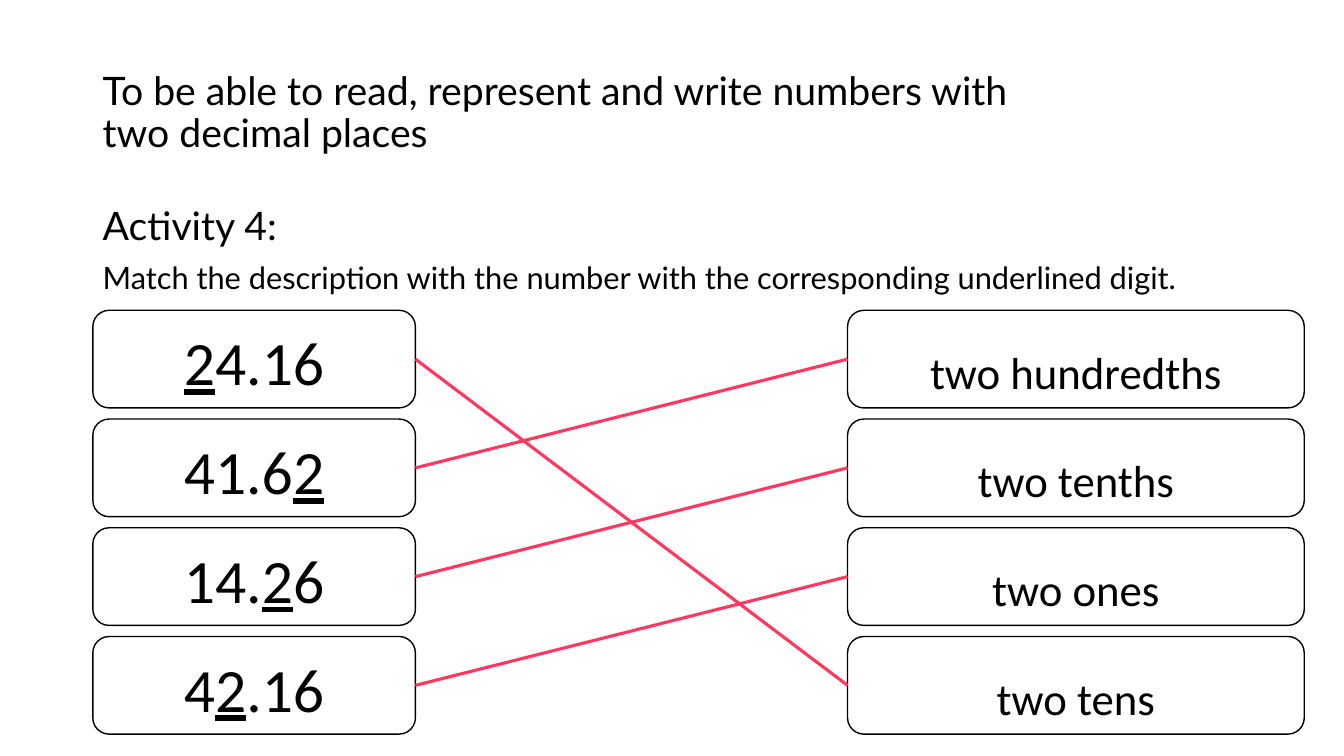
import pptx
import pptx.dml.color
import pptx.enum.shapes
import pptx.enum.text
import pptx.oxml.ns
import pptx.util
from lxml import etree

Cm = pptx.util.Cm
Pt = pptx.util.Pt
ANCHOR = pptx.enum.text.MSO_ANCHOR

COLOURS = {"paper": "FFFFFF", "ink": "000000", "match": "FF3860"}

# Each number is split into the text before, the underlined digit, the text after
NUMBERS = [("", "2", "4.16"), ("41.6", "2", ""), ("14.", "2", "6"), ("4", "2", ".16")]
DESCRIPTIONS = ["two hundredths", "two tenths", "two ones", "two tens"]
MATCHES = [3, 0, 1, 2]  # description row for each number

LEFT_EDGE = 2.34
FIRST_ROW, ROW_STEP, CARD_HEIGHT = 7.82, 2.74, 2.46
RIGHT_SITE, LEFT_SITE = 3, 1


def rgb(name):
    return pptx.dml.color.RGBColor.from_string(COLOURS[name])


def style_font(paragraph, face, size):
    paragraph.font.name = face
    paragraph.font.size = Pt(size)
    paragraph.font.color.rgb = rgb("ink")


def add_text(slide, top, width, height, lines, anchor):
    """Add left-aligned lines, each given as (wording, size)."""
    frame = slide.shapes.add_textbox(Cm(LEFT_EDGE), Cm(top), Cm(width), Cm(height)).text_frame
    frame.word_wrap = True
    frame.vertical_anchor = anchor
    for index, (wording, size) in enumerate(lines):
        paragraph = frame.add_paragraph() if index else frame.paragraphs[0]
        paragraph.text = wording
        paragraph.line_spacing = 0.9
        if index:
            paragraph.space_before = Pt(10)
        style_font(paragraph, "Lato", size)


def add_card(slide, left, row, width, size, before, underlined="", after=""):
    card = slide.shapes.add_shape(
        pptx.enum.shapes.MSO_SHAPE.ROUNDED_RECTANGLE,
        Cm(left), Cm(FIRST_ROW + row * ROW_STEP), Cm(width), Cm(CARD_HEIGHT))
    card.shadow.inherit = False
    card.fill.solid()
    card.fill.fore_color.rgb = rgb("paper")
    card.line.color.rgb = rgb("ink")
    card.line.width = Pt(1)
    card.text_frame.word_wrap = True
    card.text_frame.vertical_anchor = ANCHOR.BOTTOM
    paragraph = card.text_frame.paragraphs[0]
    paragraph.alignment = pptx.enum.text.PP_ALIGN.CENTER
    paragraph.line_spacing = 1.5
    style_font(paragraph, "Calibri", size)
    for wording, underline in ((before, None), (underlined, True), (after, None)):
        if wording:
            run = paragraph.add_run()
            run.text = wording
            run.font.underline = underline
    return card


def add_match_line(slide, number, description):
    line = slide.shapes.add_connector(pptx.enum.shapes.MSO_CONNECTOR.STRAIGHT, 0, 0, 0, 0)
    line.begin_connect(number, RIGHT_SITE)
    line.end_connect(description, LEFT_SITE)
    line.line.color.rgb = rgb("match")
    line.line.width = Pt(2.25)
    etree.SubElement(line._element.spPr, pptx.oxml.ns.qn("a:effectLst"))


def main():
    deck = pptx.Presentation()
    deck.slide_width, deck.slide_height = Cm(33.87), Cm(19.05)
    slide = deck.slides.add_slide(deck.slide_layouts[6])

    # Learning objective and instructions
    objective = "To be able to read, represent and write numbers with two decimal places"
    task = "Match the description with the number with the corresponding underlined digit."
    add_text(slide, 1.02, 24.38, 3.68, [(objective, 28)], ANCHOR.MIDDLE)
    add_text(slide, 5.08, 29.21, 12.09, [("Activity 4:", 28), (task, 22)], ANCHOR.TOP)

    # Two columns of cards
    numbers = [add_card(slide, LEFT_EDGE, row, 8.13, 44, *parts)
               for row, parts in enumerate(NUMBERS)]
    descriptions = [add_card(slide, 21.36, row, 11.51, 32, wording)
                    for row, wording in enumerate(DESCRIPTIONS)]

    # Answers
    for number, row in zip(numbers, MATCHES):
        add_match_line(slide, number, descriptions[row])

    deck.save("out.pptx")


if __name__ == "__main__":
    main()
